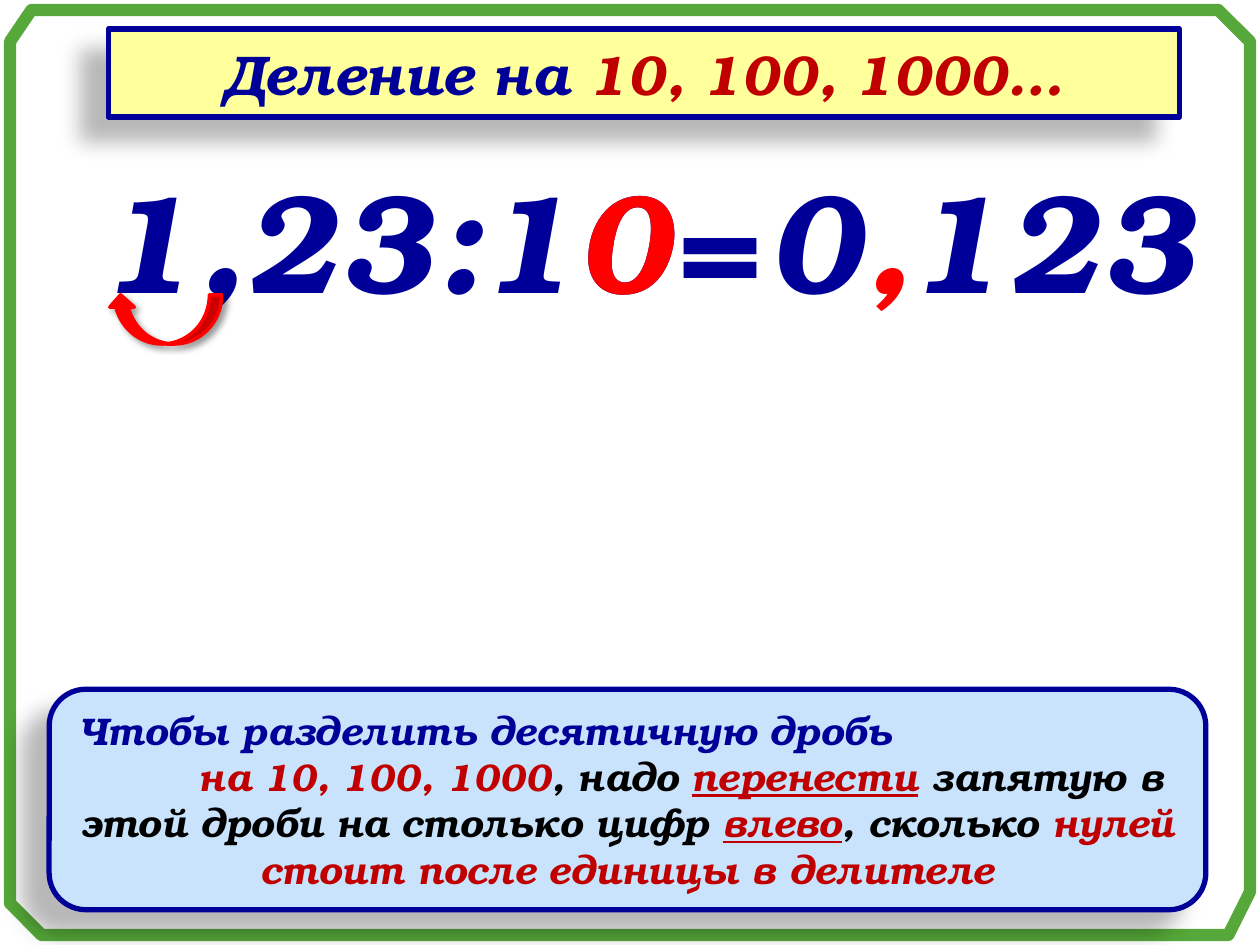
from dataclasses import dataclass

from lxml.etree import SubElement
from pptx import Presentation
from pptx.dml.color import RGBColor
from pptx.enum.shapes import MSO_SHAPE as Shape
from pptx.enum.text import MSO_ANCHOR as Anchor, MSO_AUTO_SIZE as AutoSize, PP_ALIGN as Align
from pptx.oxml.ns import qn
from pptx.util import Emu, Inches, Pt


@dataclass(frozen=True)
class Theme:
    """Colours, font and type sizes of the slide."""
    font: str = "TeX Gyre Bonum"
    navy: str = "000099"
    crimson: str = "C00000"
    red: str = "FF0000"
    black: str = "000000"
    cream: str = "FFFF9B"
    sky: str = "C8E3FB"
    green: str = "55A839"
    title: int = 32
    rule: int = 22
    sum: int = 80
    panel_shadow: tuple = (28, 11.8, 19.7, 141)
    arrow_shadow: tuple = (40, 4, 3, 45)


class Board:
    """Draws styled elements on one slide, measured in a grid of 100 by 75 cells."""

    def __init__(self, page, theme, cell):
        """Keep the slide, its theme and the side of a grid cell."""
        self.page, self.theme, self.cell = page, theme, cell

    def grid(self, *cells):
        """Turn grid cells into lengths."""
        return [Emu(round(count * self.cell)) for count in cells]

    def outline(self, shape, colour, width):
        """Set the line of a shape."""
        shape.line.color.rgb = RGBColor.from_string(colour)
        shape.line.width = Pt(width)

    def cast_shadow(self, shape, alpha, blur, distance, angle):
        """Give a shape an outer shadow."""
        shape.shadow.inherit = False
        effects = shape._element.spPr.find(qn("a:effectLst"))
        outer = SubElement(effects, qn("a:outerShdw"), blurRad=str(Pt(blur)),
                           dist=str(Pt(distance)), dir=str(angle * 60000),
                           algn="ctr", rotWithShape="0")
        tint = SubElement(outer, qn("a:srgbClr"), val=self.theme.black)
        SubElement(tint, qn("a:alpha"), val=str(alpha * 1000))

    def add_spans(self, para, spans, size, align):
        """Fill a paragraph with (text, colour, underline) spans."""
        para.alignment = align
        for text, colour, *underline in spans:
            span = para.add_run()
            span.text = text
            font = span.font
            font.name, font.size = self.theme.font, Pt(size)
            font.bold = font.italic = True
            font.color.rgb = RGBColor.from_string(colour)
            if underline:
                font.underline = True

    def frame(self, corners, colour, width):
        """Draw a closed, unfilled outline through the corners."""
        start, *others = [self.grid(*corner) for corner in corners]
        builder = self.page.shapes.build_freeform(*start)
        builder.add_line_segments(others, close=True)
        border = builder.convert_to_shape()
        border.shadow.inherit = False
        border.fill.background()
        self.outline(border, colour, width)

    def solid(self, kind, place, fill, line, width, shadow):
        """Add a filled preset shape with a shadow."""
        shape = self.page.shapes.add_shape(kind, *self.grid(*place))
        shape.fill.solid()
        shape.fill.fore_color.rgb = RGBColor.from_string(fill)
        self.outline(shape, line, width)
        self.cast_shadow(shape, *shadow)
        return shape

    def panel(self, kind, place, fill, size, paragraphs):
        """Add a navy-edged panel of (spans, alignment, margin, indent) paragraphs."""
        box = self.solid(kind, place, fill, self.theme.navy, 3, self.theme.panel_shadow)
        frame = box.text_frame
        frame.word_wrap, frame.vertical_anchor = True, Anchor.MIDDLE
        for number, (spans, align, margin, indent) in enumerate(paragraphs):
            para = frame.add_paragraph() if number else frame.paragraphs[0]
            self.add_spans(para, spans, size, align)
            left, first = self.grid(margin, indent)
            properties = para._p.get_or_add_pPr()
            properties.set("marL", str(left))
            properties.set("indent", str(first))

    def digits(self, left, width, spans):
        """Add a piece of the worked sum on its common row."""
        box = self.page.shapes.add_textbox(*self.grid(left, 11.7, width, 14.5))
        frame = box.text_frame
        frame.word_wrap, frame.auto_size = False, AutoSize.SHAPE_TO_FIT_TEXT
        self.add_spans(frame.paragraphs[0], spans, self.theme.sum, Align.LEFT)

    def comma_jump(self, place):
        """Add the curved arrow that moves the comma to the left."""
        red = self.theme.red
        arrow = self.solid(Shape.CURVED_UP_ARROW, place, red, red, 2, self.theme.arrow_shadow)
        arrow._element.spPr.xfrm.set("flipH", "1")


def main():
    """Build the slide on dividing decimals by powers of ten."""
    theme = Theme()
    deck = Presentation()
    deck.slide_width, deck.slide_height = Inches(10), Inches(7.5)
    page = deck.slides.add_slide(deck.slide_layouts[6])
    board = Board(page, theme, deck.slide_width / 100)
    navy, crimson, black = theme.navy, theme.crimson, theme.black

    board.panel(Shape.RECTANGLE, (8.6, 2.3, 85, 7), theme.cream, theme.title, [
        ([("Деление на ", navy), ("10, 100, 1000…", crimson)], Align.CENTER, 0, 0),
    ])
    board.frame([(0.8, 3.3), (0.8, 71.7), (3.3, 74.2), (97.5, 74.2),
                 (99.2, 70.8), (99.2, 3.3), (96.7, 0.8), (2.5, 0.8)], theme.green, 7)
    board.panel(Shape.ROUNDED_RECTANGLE, (3.9, 54.7, 91.8, 17.5), theme.sky, theme.rule, [
        ([("Чтобы разделить десятичную дробь", navy)], Align.LEFT, 0.5, 0),
        ([("на 10, 100, 1000", crimson), (", надо ", black),
          ("перенести", crimson, True),
          (" запятую в этой дроби на столько цифр ", black),
          ("влево", crimson, True), (", сколько ", black),
          ("нулей стоит после единицы в делителе", crimson)], Align.CENTER, 0, 8.5),
    ])
    board.digits(7, 54.5, [("1,23:10=", navy)])
    board.digits(59.9, 36.3, [("0", navy), (",", theme.red), ("123", navy)])
    board.comma_jump((8.6, 23.4, 9, 3.9))
    board.digits(44.8, 9.6, [("0", theme.red)])
    deck.save("out.pptx")


if __name__ == "__main__":
    main()
